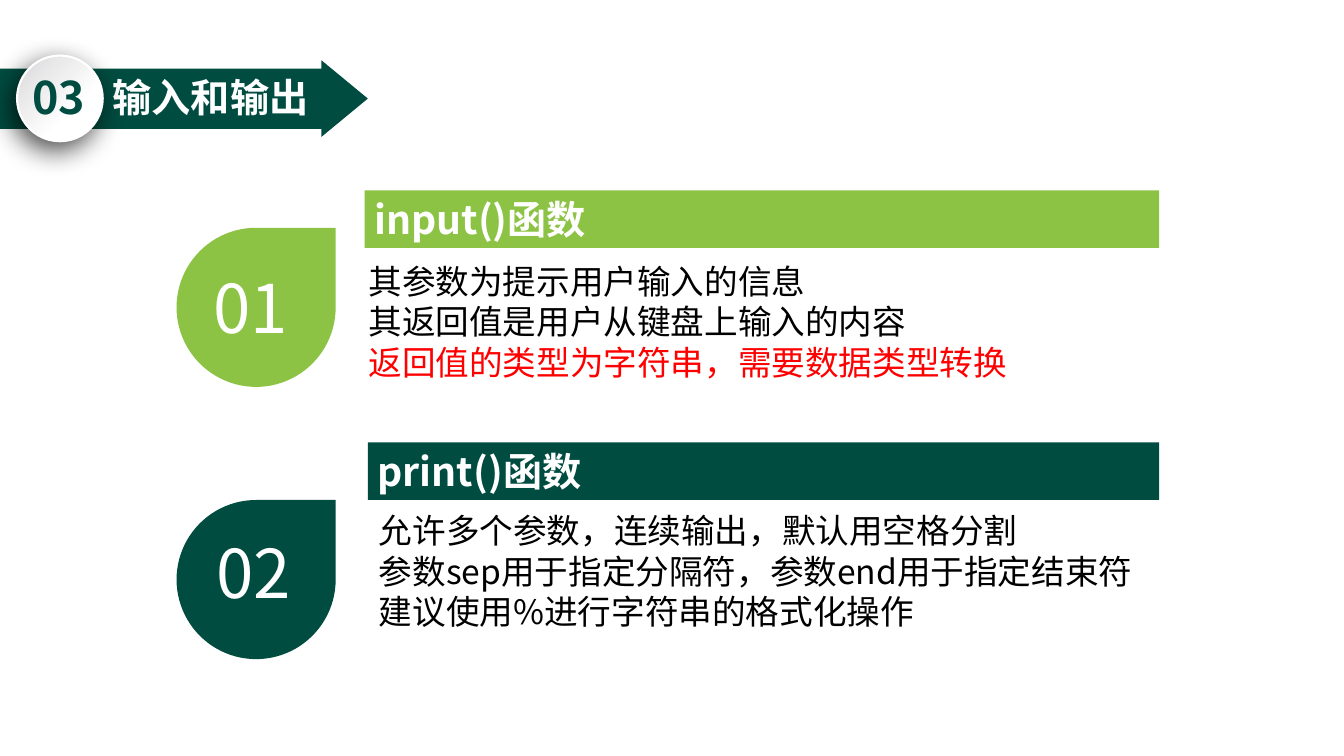
from lxml.etree import fromstring
from pptx import Presentation
from pptx.dml.color import RGBColor
from pptx.enum.shapes import MSO_SHAPE
from pptx.enum.text import MSO_ANCHOR, PP_ALIGN
from pptx.util import Cm, Pt

FONT = "Noto Sans CJK SC"
GREEN, LIME, WHITE, BLACK, RED = "004C40", "8CC344", "FFFFFF", "000000", "FF0000"
LINE_FACTOR = 1.2

HEADING = ("03", "输入和输出")
SECTIONS = [
    dict(number="01", title="input()函数", color=LIME, drop_top=5.74,
         number_at=(5.13, 6.58), bar=(9.19, 4.8), body_at=(9.04, 6.45),
         lines=[("其参数为提示用户输入的信息", BLACK),
                ("其返回值是用户从键盘上输入的内容", BLACK),
                ("返回值的类型为字符串，需要数据类型转换", RED)]),
    dict(number="02", title="print()函数", color=GREEN, drop_top=12.6,
         number_at=(5.21, 13.26), bar=(9.27, 11.15), body_at=(9.3, 12.73),
         lines=[("允许多个参数，连续输出，默认用空格分割", BLACK),
                ("参数sep用于指定分隔符，参数end用于指定结束符", BLACK),
                ("建议使用%进行字符串的格式化操作", BLACK)]),
]
BAR_RIGHT, BAR_HEIGHT = 29.21, 1.45
DROP_LEFT, DROP_SIZE = 4.45, 4.01

NAMESPACE = 'xmlns:a="http://schemas.openxmlformats.org/drawingml/2006/main"'
BADGE_FILL = f"""<a:gradFill {NAMESPACE} rotWithShape="1"><a:gsLst>
<a:gs pos="34000"><a:srgbClr val="{WHITE}"/></a:gs>
<a:gs pos="96000"><a:srgbClr val="DBDBDD"/></a:gs></a:gsLst>
<a:path path="circle"><a:fillToRect l="100000" t="100000"/></a:path></a:gradFill>"""
BADGE_SHADOW = f"""<a:effectLst {NAMESPACE}>
<a:outerShdw blurRad="254000" dist="88900" dir="7200000" algn="t" rotWithShape="0">
<a:srgbClr val="{BLACK}"><a:alpha val="70000"/></a:srgbClr></a:outerShdw></a:effectLst>"""


def rgb(color):
    return RGBColor.from_string(color)


def add_figure(slide, kind, left, top, width, height, color):
    shape = slide.shapes.add_shape(kind, Cm(left), Cm(top), Cm(width), Cm(height))
    shape.shadow.inherit = False
    shape.fill.solid()
    shape.fill.fore_color.rgb = rgb(color)
    shape.line.fill.background()
    return shape


def write(shape, lines, size, bold=False, wrap=True, align=PP_ALIGN.LEFT):
    frame = shape.text_frame
    frame.word_wrap = wrap
    frame.vertical_anchor = MSO_ANCHOR.TOP
    for index, (text, color) in enumerate(lines):
        paragraph = frame.add_paragraph() if index else frame.paragraphs[0]
        paragraph.alignment = align
        paragraph.line_spacing = Pt(size * LINE_FACTOR)
        run = paragraph.add_run()
        run.text = text
        for name, value in dict(name=FONT, size=Pt(size), bold=bold).items():
            setattr(run.font, name, value)
        run.font.color.rgb = rgb(color)
        properties = run.font._element
        properties.append(fromstring(f'<a:ea {NAMESPACE} typeface="{FONT}"/>'))


def add_text(slide, left, top, width, height, lines, size, **style):
    box = slide.shapes.add_textbox(Cm(left), Cm(top), Cm(width), Cm(height))
    write(box, lines, size, **style)


def add_heading(slide):
    number, title = HEADING
    add_figure(slide, MSO_SHAPE.RECTANGLE, 0, 1.73, 8.13, 1.52, GREEN)
    arrow_tip = add_figure(slide, MSO_SHAPE.ISOSCELES_TRIANGLE, 7.72, 1.9, 1.93, 1.17, GREEN)
    arrow_tip.rotation = 90
    add_text(slide, 2.59, 1.73, 19.71, 2.21, [(title, WHITE)], 28, bold=True)
    badge = add_figure(slide, MSO_SHAPE.OVAL, 0.43, 1.4, 2.16, 2.16, WHITE)
    badge.line.color.rgb = rgb(WHITE)
    badge.line.width = Pt(1.5)
    properties = badge._element.spPr
    properties.replace(properties.find("{*}solidFill"), fromstring(BADGE_FILL))
    properties.replace(properties.find("{*}effectLst"), fromstring(BADGE_SHADOW))
    add_text(slide, 0.56, 1.63, 1.93, 1.63, [(number, GREEN)], 32, bold=True, wrap=False)


def add_section(slide, section):
    color = section["color"]
    add_figure(slide, MSO_SHAPE.TEAR, DROP_LEFT, section["drop_top"], DROP_SIZE, DROP_SIZE, color)
    add_text(slide, *section["number_at"], 2.51, 2.31, [(section["number"], WHITE)], 48, wrap=False)
    add_text(slide, *section["body_at"], 20.14, 3.33, section["lines"], 24, align=PP_ALIGN.JUSTIFY)
    left, top = section["bar"]
    bar = add_figure(slide, MSO_SHAPE.RECTANGLE, left, top, BAR_RIGHT - left, BAR_HEIGHT, color)
    write(bar, [(section["title"], WHITE)], 28, bold=True)


def main():
    """Build the slide on input and output functions."""
    presentation = Presentation()
    presentation.slide_width, presentation.slide_height = Cm(33.87), Cm(19.05)
    slide = presentation.slides.add_slide(presentation.slide_layouts[6])
    add_heading(slide)
    for section in SECTIONS:
        add_section(slide, section)
    presentation.save("out.pptx")


if __name__ == "__main__":
    main()
